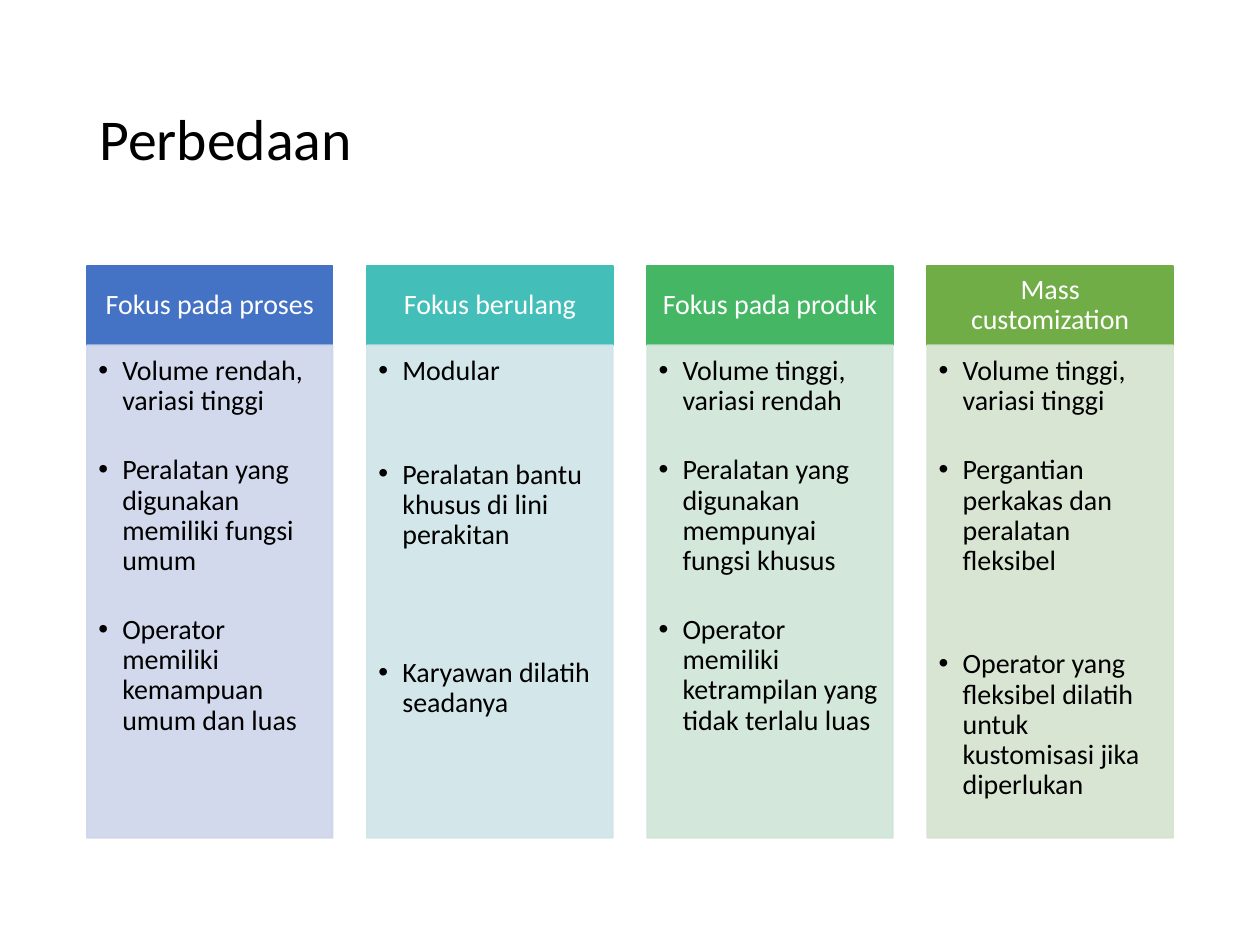
import pptx
import pptx.dml.color
import pptx.enum.shapes
import pptx.enum.text
import pptx.oxml.ns
import pptx.util
from lxml import etree
from pptx.util import Inches

COLORS = {
    "black": "000000", "white": "FFFFFF",
    "blue": "4472C4", "pale blue": "CFD5EA",
    "teal": "43BEB9", "pale teal": "CFE5E8",
    "green": "45B664", "pale green": "CFE5D8",
    "olive": "70AD47", "pale olive": "D5E3CF",
}

# Each column: heading, colour, and bullets with the empty lines above them
COLUMNS = [
    ("Fokus pada proses", "blue", [
        ("Volume rendah, variasi tinggi", 0),
        ("Peralatan yang digunakan memiliki fungsi umum", 1),
        ("Operator memiliki kemampuan umum dan luas", 1)]),
    ("Fokus berulang", "teal", [
        ("Modular", 0),
        ("Peralatan bantu khusus di lini perakitan", 2),
        ("Karyawan dilatih seadanya", 3)]),
    ("Fokus pada produk", "green", [
        ("Volume tinggi, variasi rendah", 0),
        ("Peralatan yang digunakan mempunyai fungsi khusus", 1),
        ("Operator memiliki ketrampilan yang tidak terlalu luas", 1)]),
    ("Mass customization", "olive", [
        ("Volume tinggi, variasi tinggi", 0),
        ("Pergantian perkakas dan peralatan fleksibel", 1),
        ("Operator yang fleksibel dilatih untuk kustomisasi jika diperlukan", 2)]),
]

LEFT, WIDTH, PITCH = 0.69, 1.95, 6.67 / 3
HEADER_TOP, HEADER_HEIGHT, BODY_HEIGHT = 2.11, 0.63, 3.91
EMPTY_LINE, PARAGRAPH_GAP = 19.7, 2.4  # points


def style_paragraph(paragraph, size, color):
    paragraph.line_spacing = 0.9
    font = paragraph.runs[0].font
    font.name = "Calibri"
    font.size = pptx.util.Pt(size)
    font.color.rgb = pptx.dml.color.RGBColor.from_string(COLORS[color])


def add_box(left, top, height, color, margins):
    shape = slide.shapes.add_shape(
        pptx.enum.shapes.MSO_SHAPE.RECTANGLE,
        Inches(left), Inches(top), Inches(WIDTH), Inches(height))
    shape.shadow.inherit = False
    shape.fill.solid()
    shape.line.fill.solid()
    shape.line.width = pptx.util.Pt(1)
    for fill in (shape.fill, shape.line.fill):
        fill.fore_color.rgb = pptx.dml.color.RGBColor.from_string(COLORS[color])
    frame = shape.text_frame
    frame.word_wrap = True
    frame.margin_left, frame.margin_top, frame.margin_right, frame.margin_bottom = map(Inches, margins)
    return shape


presentation = pptx.Presentation()
presentation.slide_width = Inches(10)
presentation.slide_height = Inches(7.5)
slide = presentation.slides.add_slide(presentation.slide_layouts[6])

# Title
title = slide.shapes.add_textbox(Inches(LEFT), Inches(0.4), Inches(8.62), Inches(1.45))
title.text_frame.word_wrap = True
title.text_frame.vertical_anchor = pptx.enum.text.MSO_ANCHOR.MIDDLE
title.text_frame.text = "Perbedaan"
style_paragraph(title.text_frame.paragraphs[0], 33, "black")

for index, (heading, color, bullets) in enumerate(COLUMNS):
    left = LEFT + index * PITCH

    # Column heading
    header = add_box(left, HEADER_TOP, HEADER_HEIGHT, color, (0.12, 0.07, 0.12, 0.07))
    header.text_frame.vertical_anchor = pptx.enum.text.MSO_ANCHOR.MIDDLE
    header.text_frame.text = heading
    paragraph = header.text_frame.paragraphs[0]
    paragraph.alignment = pptx.enum.text.PP_ALIGN.CENTER
    style_paragraph(paragraph, 16, "white")

    # Column body, slightly transparent
    body = add_box(left, HEADER_TOP + HEADER_HEIGHT, BODY_HEIGHT, "pale " + color,
                   (0.09, 0.09, 0.12, 0.14))
    for rgb in body.element.spPr.iter(pptx.oxml.ns.qn("a:srgbClr")):
        etree.SubElement(rgb, pptx.oxml.ns.qn("a:alpha"), val="90000")
    body.text_frame.vertical_anchor = pptx.enum.text.MSO_ANCHOR.TOP

    # Bullets
    body.text_frame.text = "\n".join(text for text, empty_lines in bullets)
    for paragraph, (text, empty_lines) in zip(body.text_frame.paragraphs, bullets):
        paragraph.alignment = pptx.enum.text.PP_ALIGN.LEFT
        style_paragraph(paragraph, 16, "black")
        if empty_lines:
            paragraph.space_before = pptx.util.Pt(empty_lines * EMPTY_LINE + PARAGRAPH_GAP)
        properties = paragraph._p.get_or_add_pPr()
        properties.set("marL", str(Inches(0.19)))
        properties.set("indent", str(Inches(-0.19)))
        etree.SubElement(properties, pptx.oxml.ns.qn("a:buFont"), typeface="Arial")
        etree.SubElement(properties, pptx.oxml.ns.qn("a:buChar"), char="•")

presentation.save("out.pptx")
